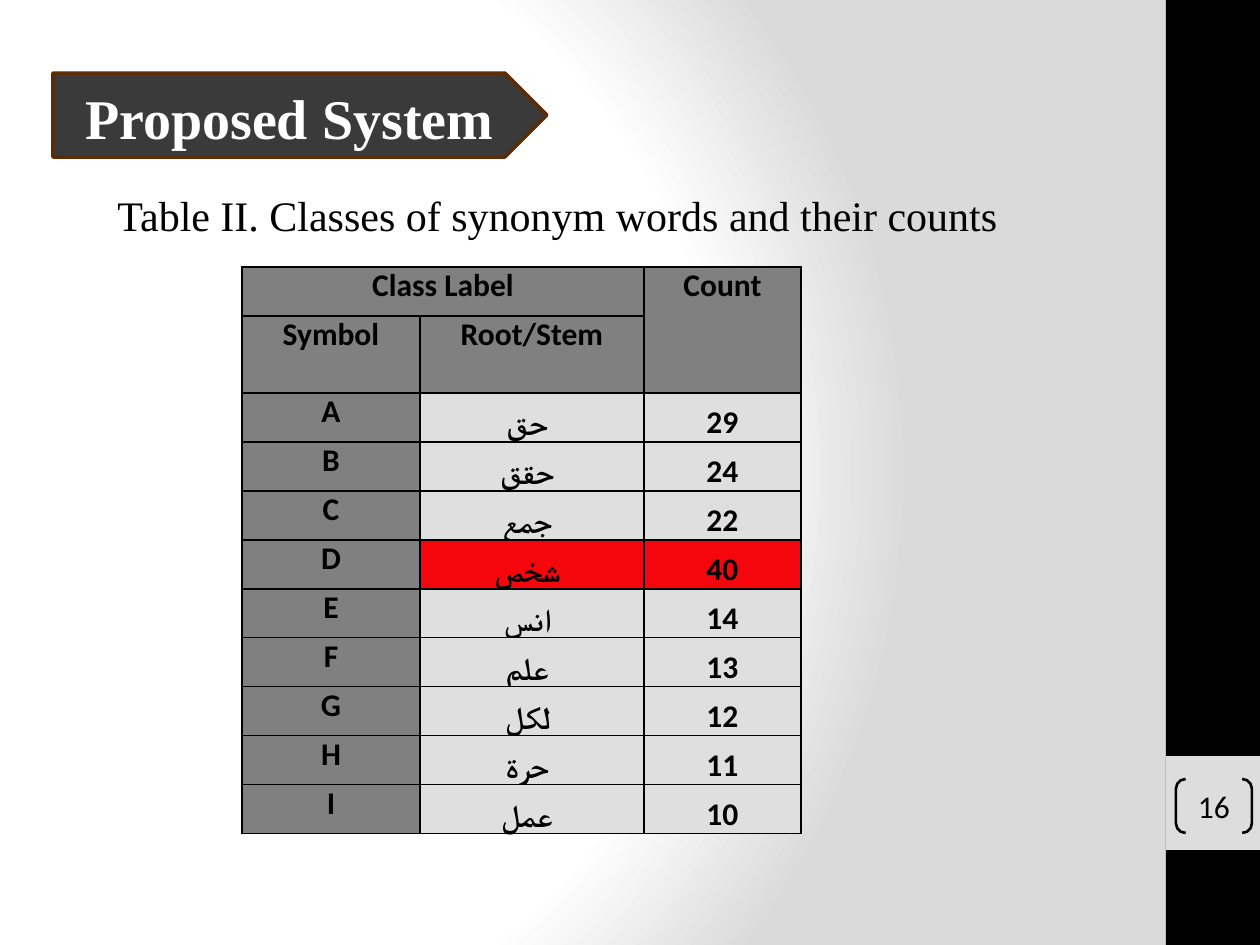
from dataclasses import dataclass

from lxml import etree
from pptx import Presentation
from pptx.dml.color import RGBColor
from pptx.enum.shapes import MSO_SHAPE
from pptx.enum.text import MSO_ANCHOR, PP_ALIGN
from pptx.oxml import parse_xml
from pptx.oxml.ns import nsdecls, qn
from pptx.util import Emu, Pt

RECT, PLATE, PAIR = MSO_SHAPE.RECTANGLE, MSO_SHAPE.PENTAGON, MSO_SHAPE.DOUBLE_BRACKET
TOP, MID, LOW = MSO_ANCHOR.TOP, MSO_ANCHOR.MIDDLE, MSO_ANCHOR.BOTTOM
LEFT, CENTER = PP_ALIGN.LEFT, PP_ALIGN.CENTER
SCALE = 914400 // 126
WIDE, HIGH = 1260, 945


@dataclass(frozen=True)
class Theme:
    ink: str = "000000"
    paper: str = "FFFFFF"
    shade: str = "DADADA"
    tab: str = "DDDDDD"
    plate: str = "3A3A3A"
    edge: str = "5C2C04"
    head: str = "808080"
    body: str = "DFDFDF"
    mark: str = "F4060C"
    serif: str = "Times New Roman"
    sans: str = "Calibri"
    title: int = 32
    caption: int = 24
    text: int = 18


THEME = Theme()
HEADS = ["Symbol", "Root/Stem", "Count"]
ROWS = [
    ("A", "حق ", 29), ("B", "حقق ", 24), ("C", "جمع ", 22),
    ("D", "شخص ", 40), ("E", "انس ", 14), ("F", "علم ", 13),
    ("G", "لكل ", 12), ("H", "حرة ", 11), ("I", "عمل ", 10),
]


def px(num):
    return Emu(num * SCALE)


def rgb(code):
    return RGBColor.from_string(code)


def write(frame, text, size=THEME.text, font=THEME.sans, color=THEME.ink,
          bold=False, align=CENTER):
    para = frame.paragraphs[0]
    para.alignment = align
    run = para.add_run()
    run.text = text
    run.font.size, run.font.name, run.font.bold = Pt(size), font, bold
    run.font.color.rgb = rgb(color)


def shape(slide, kind, box, fill=None, line=None, width=1):
    item = slide.shapes.add_shape(kind, *map(px, box))
    item.shadow.inherit = False
    if fill:
        item.fill.solid()
        item.fill.fore_color.rgb = rgb(fill)
    else:
        item.fill.background()
    if line:
        item.line.color.rgb = rgb(line)
        item.line.width = Pt(width)
    else:
        item.line.fill.background()
    return item


def backdrop(slide):
    stops = [(0, THEME.paper), (75, THEME.paper), (100, THEME.shade)]
    marks = "".join(f'<a:gs pos="{pos * 1000}"><a:srgbClr val="{code}"/></a:gs>'
                    for pos, code in stops)
    slide.element.cSld.insert(0, parse_xml(
        f'<p:bg {nsdecls("p", "a")}><p:bgPr><a:gradFill rotWithShape="1">'
        f'<a:gsLst>{marks}</a:gsLst><a:path path="circle">'
        '<a:fillToRect l="20000" t="50000" r="100000" b="50000"/></a:path>'
        '</a:gradFill><a:effectLst/></p:bgPr></p:bg>'))


def sidebar(slide, box, number):
    x, y, w, h = box
    shape(slide, RECT, box, THEME.ink)
    # Page number tab
    shape(slide, RECT, (x, y + h * 4 // 5, w, w), THEME.tab)
    pair = shape(slide, PAIR, (x + 10, y + 779, w - 18, 54), line=THEME.ink, width=1.5)
    pair.adjustments[0] = 0.18
    frame = pair.text_frame
    frame.margin_left = frame.margin_right = 0
    frame.margin_top = frame.margin_bottom = 0
    frame.vertical_anchor = MID
    write(frame, number)


def banner(slide, box, text):
    x, y, w, h = box
    plate = shape(slide, PLATE, box, THEME.plate, THEME.edge, 2)
    title = slide.shapes.title
    title.element.addprevious(plate.element)
    # The title stops halfway along the plate's point
    title.left, title.top, title.width, title.height = map(px, (x, y + 2, w - h // 4, h))
    frame = title.text_frame
    frame.word_wrap = True
    frame.vertical_anchor = MID
    write(frame, text, size=THEME.title, font=THEME.serif, color=THEME.paper, bold=True)


def caption(slide, box, text):
    frame = slide.shapes.add_textbox(*map(px, box)).text_frame
    frame.word_wrap = False
    frame.vertical_anchor = MID
    write(frame, text, size=THEME.caption, font=THEME.serif, align=LEFT)


def style(cell, fill, anchor=TOP):
    cell.margin_left = cell.margin_right = px(9)
    cell.margin_top = cell.margin_bottom = 0
    cell.vertical_anchor = anchor
    props = cell._tc.get_or_add_tcPr()
    for side in ("lnL", "lnR", "lnT", "lnB"):
        line = etree.SubElement(props, qn(f"a:{side}"), w=str(Pt(1)))
        solid = etree.SubElement(line, qn("a:solidFill"))
        etree.SubElement(solid, qn("a:srgbClr"), val=THEME.ink)
    cell.fill.solid()
    cell.fill.fore_color.rgb = rgb(fill)


def counts(slide, box, cols, row, extra):
    grid = slide.shapes.add_table(len(ROWS) + 2, len(cols), *map(px, box)).table
    grid.first_row = grid.horz_banding = False
    for col, wide in zip(grid.columns, cols):
        col.width = px(wide)
    for line in grid.rows:
        line.height = px(row)
    grid.rows[1].height = px(row + extra)

    # Two header rows with merged cells
    for r in range(2):
        for c in range(len(cols)):
            style(grid.cell(r, c), THEME.head)
    grid.cell(0, 0).merge(grid.cell(0, 1))
    grid.cell(0, 2).merge(grid.cell(1, 2))
    write(grid.cell(0, 0).text_frame, "Class Label", bold=True)
    for c, head in enumerate(HEADS):
        write(grid.cell(0 if c == 2 else 1, c).text_frame, head, bold=True)

    # Body rows, with the largest count marked
    peak = max(count for _, _, count in ROWS)
    for r, data in enumerate(ROWS, 2):
        tone = THEME.mark if data[2] == peak else THEME.body
        for c, value in enumerate(data):
            cell = grid.cell(r, c)
            style(cell, tone if c else THEME.head, LOW if c else TOP)
            write(cell.text_frame, str(value), bold=True)


def main():
    deck = Presentation()
    deck.slide_width, deck.slide_height = px(WIDE), px(HIGH)
    slide = deck.slides.add_slide(deck.slide_layouts[5])
    backdrop(slide)
    sidebar(slide, (1166, 0, 94, HIGH), "16")
    banner(slide, (53, 73, 494, 84), "Proposed System")
    counts(slide, (242, 267, 559, 568), (178, 224, 157), 49, 28)
    caption(slide, (105, 180, 914, 70),
            "Table II. Classes of synonym words and their counts")
    deck.save("out.pptx")


if __name__ == "__main__":
    main()
